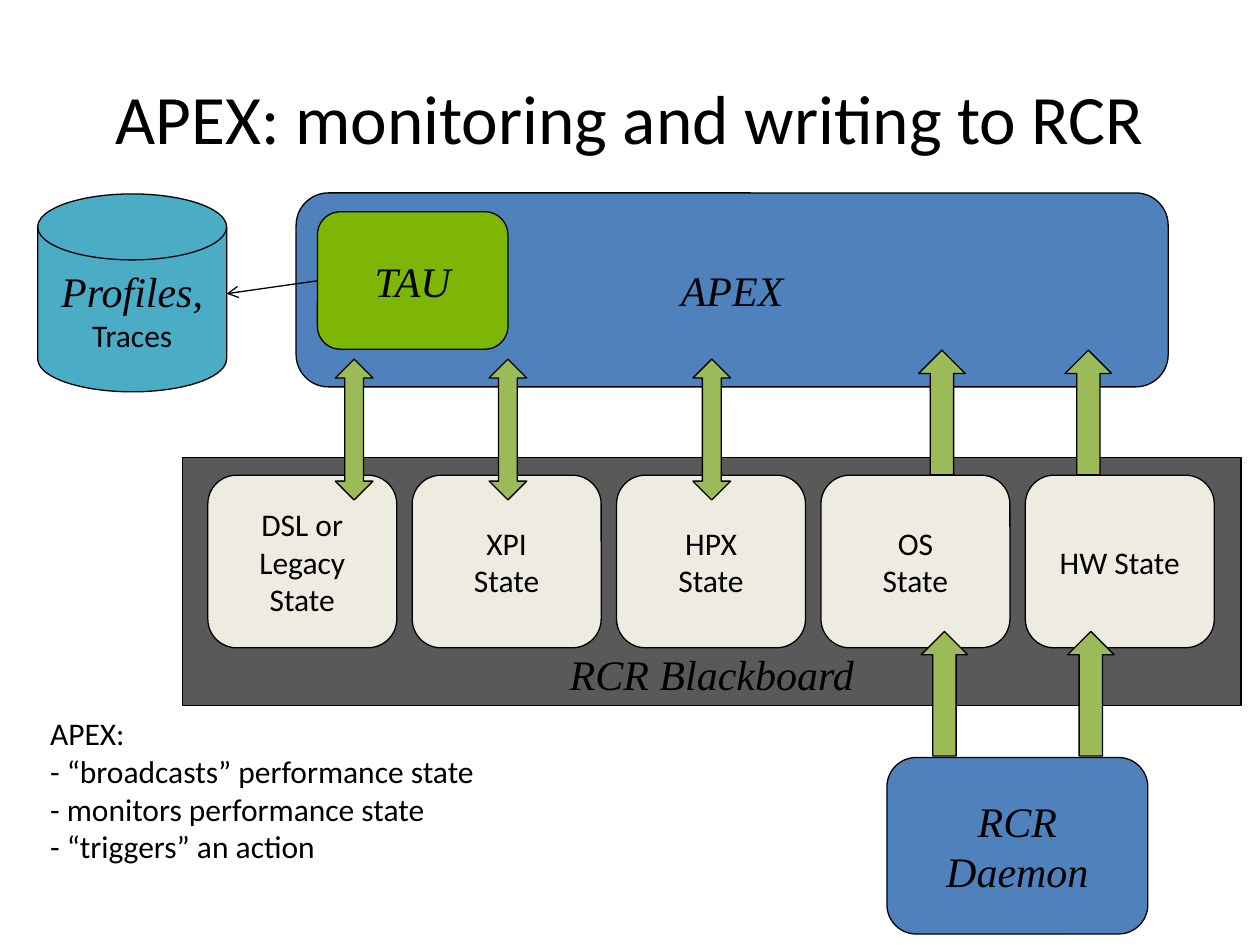
"""Build the slide on APEX monitoring and writing to the RCR blackboard."""
from dataclasses import dataclass

import lxml.etree
import pptx
import pptx.dml.color
import pptx.enum.shapes
import pptx.enum.text
import pptx.oxml.ns
import pptx.slide
import pptx.text.text
import pptx.util

Cm = pptx.util.Cm
Kind = pptx.enum.shapes.MSO_SHAPE
Anchor = pptx.enum.text.MSO_ANCHOR
Align = pptx.enum.text.PP_ALIGN
qn = pptx.oxml.ns.qn


@dataclass(frozen=True)
class TextStyle:
    font: str
    size: float
    italic: bool = False


@dataclass(frozen=True)
class Theme:
    ink: str = "000000"
    board: str = "595959"
    state: str = "EEECE1"
    component: str = "4F81BD"
    storage: str = "4BACC6"
    tau: str = "7EB606"
    flow: str = "9BBB59"
    outline: float = 0.75
    title: TextStyle = TextStyle("Calibri", 39.6)
    body: TextStyle = TextStyle("Calibri", 18)
    name: TextStyle = TextStyle("Times New Roman", 24, True)


THEME = Theme()


@dataclass(frozen=True)
class Box:
    left: float
    top: float
    width: float
    height: float

    def lengths(self) -> tuple[pptx.util.Length, ...]:
        return Cm(self.left), Cm(self.top), Cm(self.width), Cm(self.height)


@dataclass(frozen=True)
class Line:
    text: str
    style: TextStyle


@dataclass(frozen=True)
class Node:
    kind: Kind
    box: Box
    fill: str
    lines: tuple[Line, ...] = ()
    anchor: Anchor = Anchor.MIDDLE


def rgb(value: str) -> pptx.dml.color.RGBColor:
    return pptx.dml.color.RGBColor.from_string(value)


def write(frame: pptx.text.text.TextFrame, lines: tuple[Line, ...],
          align: Align, anchor: Anchor) -> None:
    frame.text = "\n".join(line.text for line in lines)
    frame.vertical_anchor = anchor
    for paragraph, line in zip(frame.paragraphs, lines):
        paragraph.alignment = align
        for run in paragraph.runs:
            run.font.name = line.style.font
            run.font.size = pptx.util.Pt(line.style.size)
            run.font.italic = line.style.italic
            run.font.color.rgb = rgb(THEME.ink)


def draw_node(slide: pptx.slide.Slide, node: Node) -> None:
    shape = slide.shapes.add_shape(node.kind, *node.box.lengths())
    shape.shadow.inherit = False
    shape.fill.solid()
    shape.fill.fore_color.rgb = rgb(node.fill)
    shape.line.color.rgb = rgb(THEME.ink)
    shape.line.width = pptx.util.Pt(THEME.outline)
    if node.lines:
        write(shape.text_frame, node.lines, Align.CENTER, node.anchor)


def draw_text(slide: pptx.slide.Slide, box: Box, lines: tuple[Line, ...],
              align: Align, anchor: Anchor) -> None:
    frame = slide.shapes.add_textbox(*box.lengths()).text_frame
    frame.word_wrap = True
    write(frame, lines, align, anchor)


def draw_link(slide: pptx.slide.Slide, start: tuple[float, float],
              end: tuple[float, float]) -> None:
    link = slide.shapes.add_connector(
        pptx.enum.shapes.MSO_CONNECTOR.STRAIGHT,
        *(Cm(value) for value in start + end))
    link.line.color.rgb = rgb(THEME.ink)
    link.line.width = pptx.util.Pt(THEME.outline)
    properties = link.element.find(qn("p:spPr"))
    lxml.etree.SubElement(properties.find(qn("a:ln")), qn("a:tailEnd"), type="arrow")
    lxml.etree.SubElement(properties, qn("a:effectLst"))


def styled(style: TextStyle, *texts: str) -> tuple[Line, ...]:
    return tuple(Line(text, style) for text in texts)


def state_nodes() -> list[Node]:
    states = (("DSL or", "Legacy", "State"), ("XPI", "State"),
              ("HPX", "State"), ("OS", "State"), ("HW State",))
    return [Node(Kind.ROUNDED_RECTANGLE,
                 Box(4.19 + 4.12 * column, 9.58, 3.81, 3.48),
                 THEME.state, styled(THEME.body, *words))
            for column, words in enumerate(states)]


def component_nodes() -> list[Node]:
    return [
        Node(Kind.ROUNDED_RECTANGLE, Box(5.97, 3.89, 17.58, 3.91),
             THEME.component, styled(THEME.name, "APEX")),
        Node(Kind.FLOWCHART_MAGNETIC_DISK, Box(0.76, 3.91, 3.81, 3.99),
             THEME.storage, styled(THEME.name, "Profiles,")
             + styled(THEME.body, "Traces")),
        Node(Kind.ROUNDED_RECTANGLE, Box(17.88, 15.27, 5.26, 3.56),
             THEME.component, styled(THEME.name, "RCR Daemon")),
        Node(Kind.ROUNDED_RECTANGLE, Box(6.4, 4.27, 3.84, 2.77),
             THEME.tau, styled(THEME.name, "TAU")),
    ]


def flow_nodes() -> list[Node]:
    upward = [Node(Kind.UP_ARROW, Box(left + shift, top, 0.94, 2.51), THEME.flow)
              for left, top in ((18.57, 12.73), (18.52, 7.06))
              for shift in (0, 2.95)]
    two_way = [Node(Kind.UP_DOWN_ARROW, Box(left, 7.24, 0.76, 2.84), THEME.flow)
               for left in (6.76, 9.86, 13.97)]
    return upward + two_way


def main() -> None:
    deck = pptx.Presentation()
    deck.slide_width, deck.slide_height = Cm(25.4), Cm(19.05)
    slide = deck.slides.add_slide(deck.slide_layouts[6])
    draw_text(slide, Box(1.27, 0.76, 22.86, 3.18),
              styled(THEME.title, "APEX: monitoring and writing to RCR"),
              Align.CENTER, Anchor.MIDDLE)
    blackboard = Node(Kind.RECTANGLE, Box(3.68, 9.22, 21.34, 5), THEME.board,
                      styled(THEME.name, "RCR Blackboard"), Anchor.BOTTOM)
    for node in [blackboard] + state_nodes() + component_nodes():
        draw_node(slide, node)
    draw_link(slide, (6.4, 5.66), (4.57, 5.92))
    for arrow in flow_nodes():
        draw_node(slide, arrow)
    draw_text(slide, Box(0.76, 14.27, 11.73, 4.37),
              styled(THEME.body, "APEX:", "- “broadcasts” performance state",
                     "- monitors performance state", "- “triggers” an action"),
              Align.LEFT, Anchor.TOP)
    deck.save("out.pptx")


if __name__ == "__main__":
    main()
